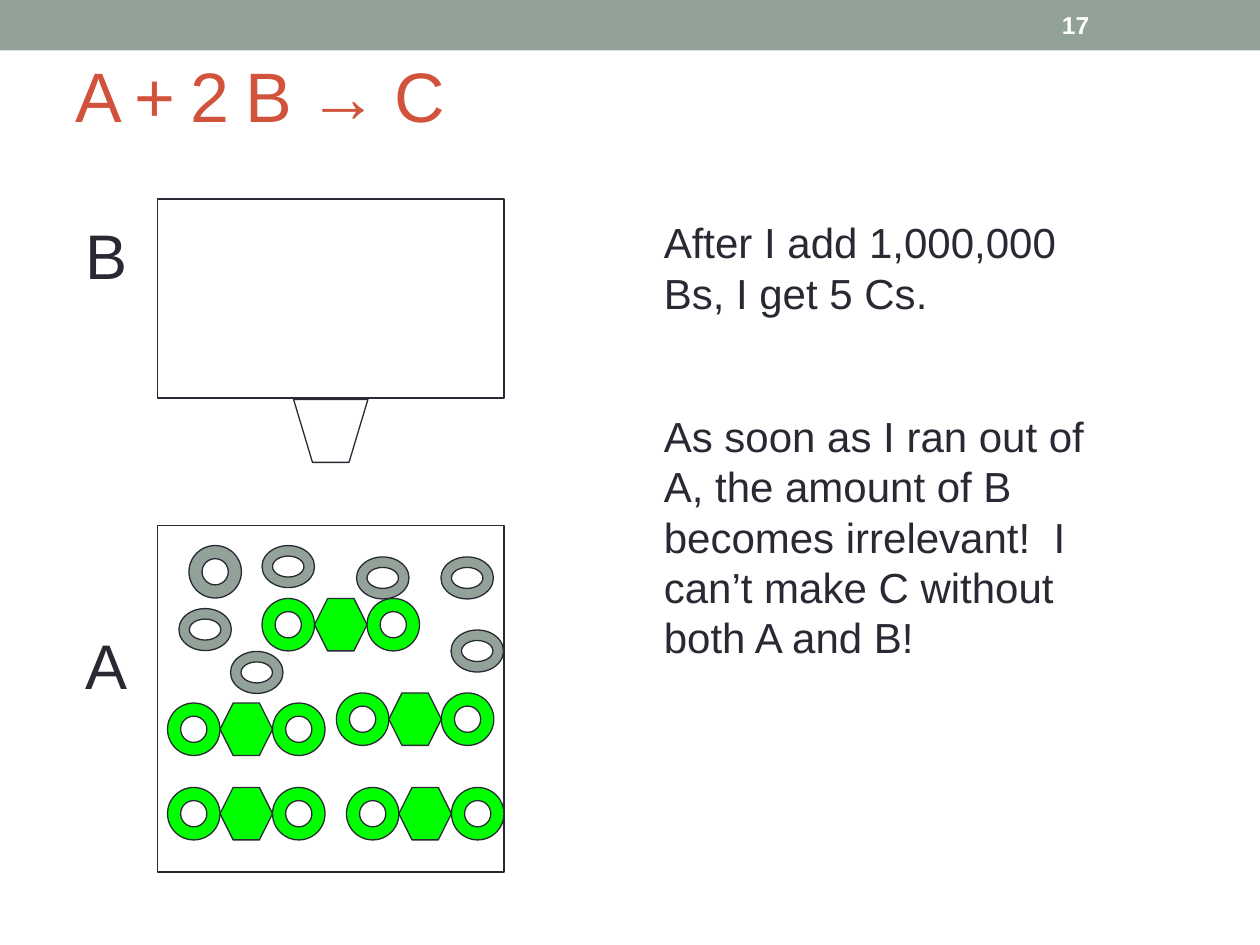
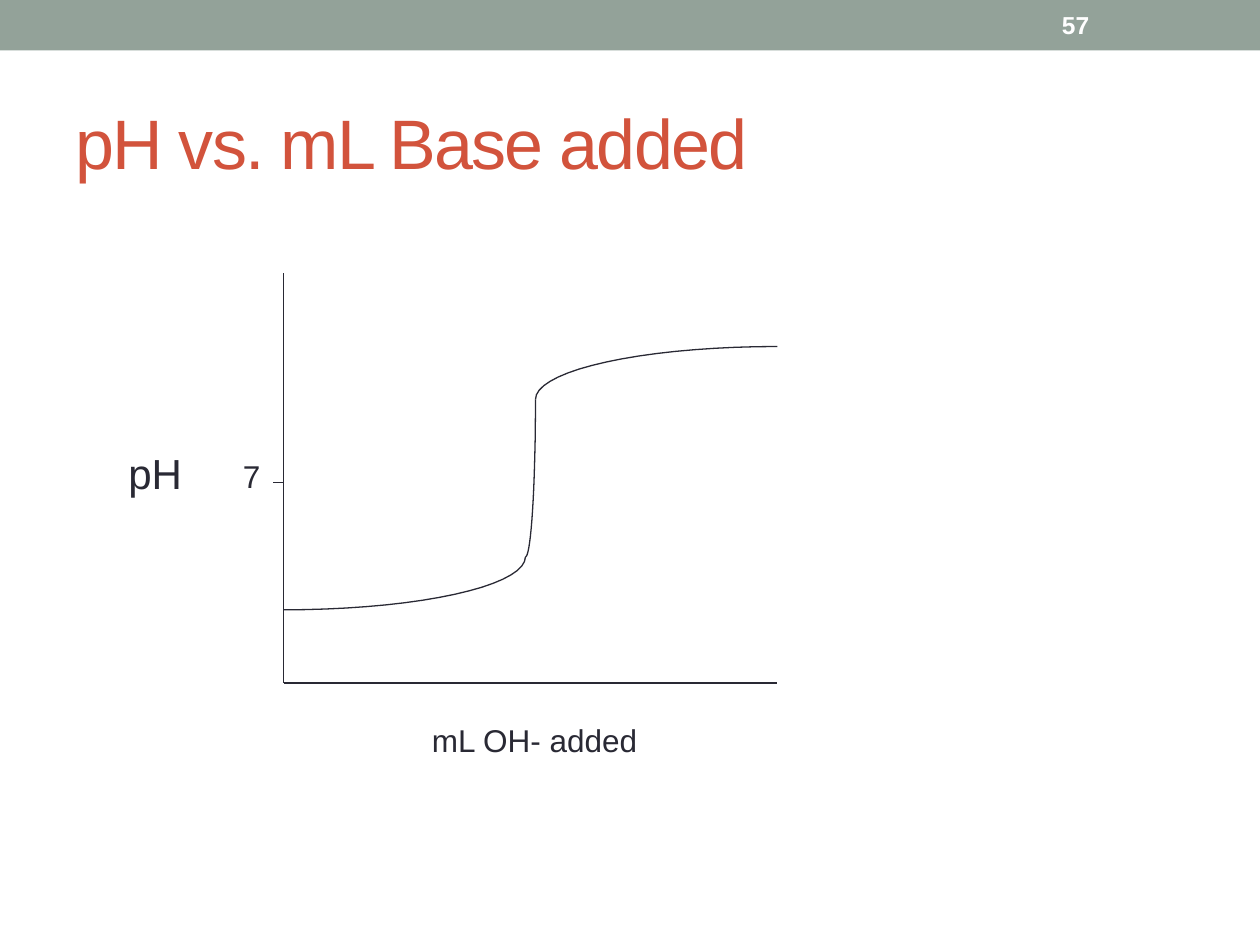
import math
from typing import NamedTuple

from pptx import Presentation
from pptx import util as u
from pptx.dml.color import RGBColor
from pptx.enum import shapes, text
from pptx.oxml.ns import qn

COLORS = {"band": "93A299", "title": "D2533C", "ink": "292934",
          "product": "00FF00", "white": "FFFFFF"}
FONT = "Arial"
LINE_WIDTH = u.Pt(0.75)
PART = 5 / 12  # side of one ring or hexagon, in inches
FLAT = 1 / 3  # height of a flattened ring

Point = tuple[float, float]


class Box(NamedTuple):
    x: float
    y: float
    w: float
    h: float

    def emu(self) -> list[int]:
        return [u.Inches(v) for v in self]


class Label(NamedTuple):
    text: str
    box: Box
    size: int
    wrap: bool = True


class QuarterArc(NamedTuple):
    """Quarter of an ellipse, running from start to start - 90 degrees."""
    center: Point
    rx: float
    ry: float
    start: int

    def points(self, steps: int = 18) -> list[Point]:
        angles = [math.radians(self.start - 90 * i / steps) for i in range(steps + 1)]
        return [(self.center[0] + self.rx * math.cos(a),
                 self.center[1] + self.ry * math.sin(a)) for a in angles]


BAND = Box(0, 0, 10, 0.4)
PAGE_NUMBER = Box(8.33, 0.02, 1.17, 0.36)

TANK_B = Box(1.25, 1.58, 2.75, 1.58)
TANK_A = Box(1.25, 4.17, 2.75, 2.75)
SPOUT = [(2.33, 3.17), (2.48, 3.67), (2.77, 3.67), (2.92, 3.17)]
TANK_LABELS = [Label("B", Box(0.58, 1.67, 0.42, 0.7), 36),
               Label("A", Box(0.58, 4.92, 0.42, 0.7), 36)]
MOLECULES_C = [(2.08, 4.75), (1.33, 6.25), (1.33, 5.58), (2.67, 5.5), (2.75, 6.25)]
LEFTOVER_RINGS = [Box(1.5, 4.33, PART, PART)] + [
    Box(x, y, PART, FLAT) for x, y in
    [(2.08, 4.33), (1.42, 4.83), (1.83, 5.17), (2.83, 4.42), (3.58, 5), (3.5, 4.42)]]
EXPLANATION = Label(
    "After I add 1,000,000 Bs, I get 5 Cs.\n"
    "As soon as I ran out of A, the amount of B becomes irrelevant!  "
    "I can’t make C without both A and B!", Box(5.17, 1.67, 3.58, 3.69), 24)

AXES = [((2.25, 2.17), (2.25, 5.42)), ((2.25, 5.42), (6.17, 5.42)),
        ((2.17, 3.83), (2.25, 3.83))]
TITRATION_CURVE = [QuarterArc((2.25, 4.42), 1.92, 0.42, 90),
                   QuarterArc((4.17, 3.17), 0.08, 1.25, 90),
                   QuarterArc((6.17, 3.17), 1.92, 0.42, 270)]
PLOT_LABELS = [Label("pH", Box(0.92, 3.5, 0.63, 0.5), 24, False),
               Label("mL OH- added", Box(3.33, 5.67, 1.84, 0.4), 18, False),
               Label("7", Box(1.83, 3.58, 0.34, 0.4), 18, False)]


def rgb(name: str) -> RGBColor:
    return RGBColor.from_string(COLORS[name])


def style(sp, fill: str | None = None, outlined: bool = True) -> None:
    sp.shadow.inherit = False
    if fill:
        sp.fill.solid()
        sp.fill.fore_color.rgb = rgb(fill)
    else:
        sp.fill.background()
    if outlined:
        sp.line.color.rgb = rgb("ink")
        sp.line.width = LINE_WIDTH
    else:
        sp.line.fill.background()


def add_preset(s, kind, box: Box, fill: str | None = None, outlined: bool = True) -> None:
    style(s.shapes.add_shape(kind, *box.emu()), fill, outlined)


def add_outline(s, points: list[Point], closed: bool = True) -> None:
    path = [(u.Inches(x), u.Inches(y)) for x, y in points]
    builder = s.shapes.build_freeform(*path[0])
    builder.add_line_segments(path[1:], close=closed)
    style(builder.convert_to_shape())


def add_line(s, start: Point, end: Point) -> None:
    ends = [u.Inches(v) for v in (*start, *end)]
    c = s.shapes.add_connector(shapes.MSO_CONNECTOR.STRAIGHT, *ends)
    c.line.color.rgb = rgb("ink")
    c.line.width = LINE_WIDTH
    sp_pr = c._element.spPr
    sp_pr.append(sp_pr.makeelement(qn("a:effectLst"), {}))


def add_text(s, label: Label, color: str = "ink", middle: bool = False,
             bold: bool = False, gap: float = 0):
    """Add a text box; gap is the space in points between its paragraphs."""
    tf = s.shapes.add_textbox(*label.box.emu()).text_frame
    tf.word_wrap = label.wrap
    if middle:
        tf.vertical_anchor = text.MSO_ANCHOR.MIDDLE
    tf.text = label.text
    for i, p in enumerate(tf.paragraphs):
        p.font.name = FONT
        p.font.size = u.Pt(label.size)
        p.font.bold = bold
        p.font.color.rgb = rgb(color)
        if i:
            p.space_before = u.Pt(gap)
    return tf


def add_molecule(s, x: float, y: float) -> None:
    """Draw one C: a hexagon between two rings."""
    kinds = (shapes.MSO_SHAPE.DONUT, shapes.MSO_SHAPE.HEXAGON, shapes.MSO_SHAPE.DONUT)
    for i, kind in enumerate(kinds):
        add_preset(s, kind, Box(x + i * PART, y, PART, PART), "product")


def add_base_slide(prs, title: str, title_box: Box, number: int):
    s = prs.slides.add_slide(prs.slide_layouts[6])
    add_preset(s, shapes.MSO_SHAPE.RECTANGLE, BAND, "band", outlined=False)
    tf = add_text(s, Label(title, title_box, 40), "title", middle=True)
    tf.paragraphs[0].runs[0]._r.get_or_add_rPr().set("spc", "-100")
    add_text(s, Label(str(number), PAGE_NUMBER, 14), "white", middle=True, bold=True)
    return s


def build_reaction_slide(prs) -> None:
    s = add_base_slide(prs, "A + 2 B → C", Box(0.5, 0.25, 8.77, 1), 17)
    for tank in (TANK_B, TANK_A):
        add_preset(s, shapes.MSO_SHAPE.RECTANGLE, tank)
    add_outline(s, SPOUT)
    for label in TANK_LABELS:
        add_text(s, label)
    for x, y in MOLECULES_C:
        add_molecule(s, x, y)
    for ring in LEFTOVER_RINGS:
        add_preset(s, shapes.MSO_SHAPE.DONUT, ring, "band")
    add_text(s, EXPLANATION, gap=53)


def build_titration_slide(prs) -> None:
    s = add_base_slide(prs, "pH vs. mL Base added", Box(0.5, 0.58, 9, 1.08), 57)
    for start, end in AXES:
        add_line(s, start, end)
    for arc in TITRATION_CURVE:
        add_outline(s, arc.points(), closed=False)
    for label in PLOT_LABELS:
        add_text(s, label)


def main() -> None:
    prs = Presentation()
    prs.slide_width, prs.slide_height = u.Inches(10), u.Inches(7.5)
    build_reaction_slide(prs)
    build_titration_slide(prs)
    prs.save("out.pptx")


if __name__ == "__main__":
    main()
